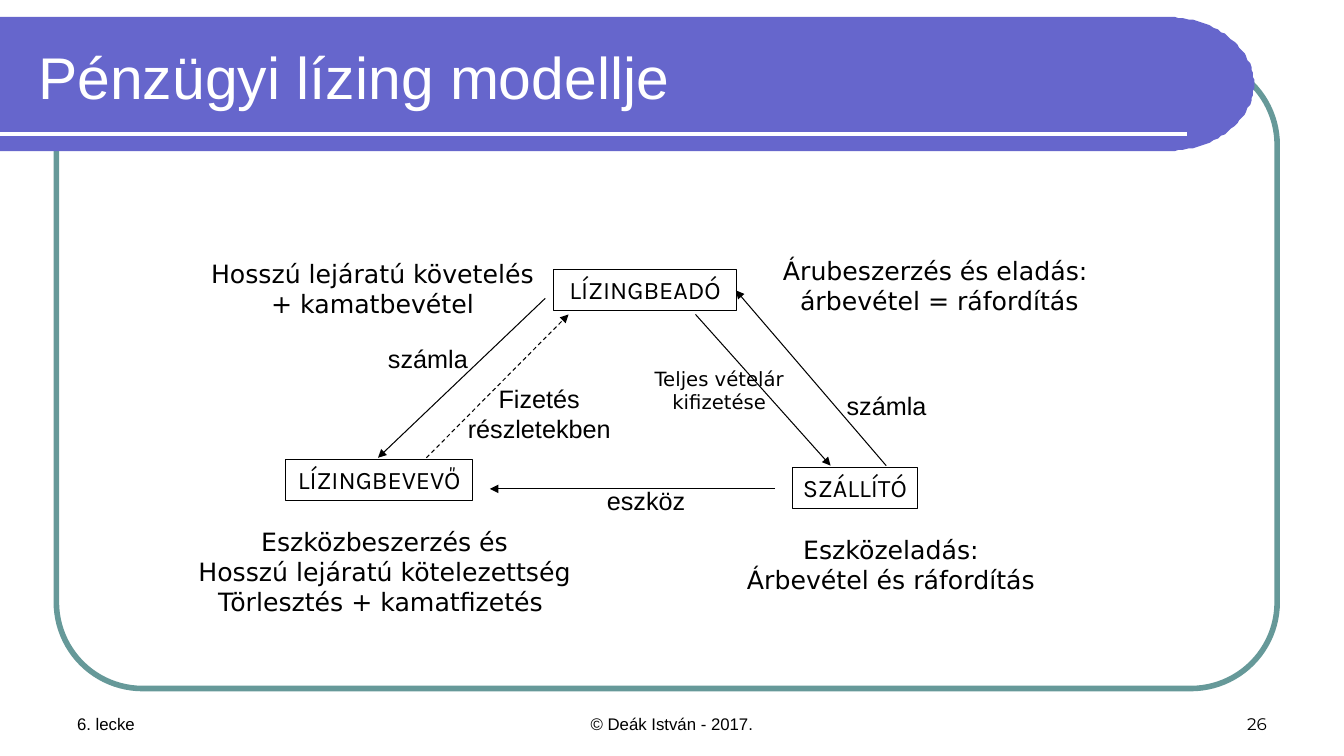
import math
from lxml import etree
from pptx import Presentation
from pptx import util as u
from pptx.dml.color import RGBColor
from pptx.enum import dml, shapes, text
from pptx.oxml.ns import qn

BLACK = RGBColor(0x00, 0x00, 0x00)
WHITE = RGBColor(0xFF, 0xFF, 0xFF)
PURPLE = RGBColor(0x66, 0x66, 0xCC)
TEAL = RGBColor(0x66, 0x99, 0x99)
LEFT, CENTER, RIGHT = (text.PP_ALIGN.LEFT, text.PP_ALIGN.CENTER,
                       text.PP_ALIGN.RIGHT)

# Diagram content, in points from the diagram's top left corner
PARTIES = [  # name, left, top, width
    ("LÍZINGBEADÓ", 261.3, 14.2, 131),
    ("SZÁLLÍTÓ", 432, 156, 89.3),
    ("LÍZINGBEVEVŐ", 69.8, 150.3, 134),
]
FLOWS = [  # start, end, dashed
    ((499, 154.6), (391.6, 29.4), False),
    ((362.8, 46.6), (459.3, 154.6), False),
    ((255.5, 35.1), (136, 149), False),
    ((170.6, 149), (272.1, 46.6), True),
    ((419.7, 171.2), (216, 171.2), False),
]
LABELS = [  # wording, left, top, width, height, font, size
    ("Eszközeladás:\nÁrbevétel és ráfordítás",
     392.3, 200, 220.3, 50.4, "DejaVu Sans", 18),
    ("Árubeszerzés és eladás:\n árbevétel = ráfordítás",
     417.5, 0.6, 233.3, 50.4, "DejaVu Sans", 18),
    ("Eszközbeszerzés és\nHosszú lejáratú kötelezettség\nTörlesztés + kamatfizetés ",
     0, 194.2, 281.5, 72, "DejaVu Sans", 18),
    ("Hosszú lejáratú követelés\n+ kamatbevétel",
     8.6, 2.7, 247, 50.4, "DejaVu Sans", 18),
    ("Teljes vételár\nkifizetése", 325.4, 80.5, 108.7, 41, "DejaVu Sans", 14),
    ("számla", 463.6, 97, 71.3, 28.8, "Arial", 18),
    ("számla", 136, 63.9, 71.3, 28.8, "Arial", 18),
    ("Fizetés\nrészletekben", 192.9, 92, 116.6, 50.4, "Arial", 18),
    ("eszköz", 292.2, 165.4, 70.6, 28.8, "Arial", 18),
]


def points(*lengths):
    return [u.Pt(length) for length in lengths]


def write(shape, wording, font, size, color=BLACK, align=CENTER,
          anchor=text.MSO_ANCHOR.TOP, wrap=False):
    frame = shape.text_frame
    frame.text = wording
    frame.word_wrap = wrap
    frame.vertical_anchor = anchor
    for para in frame.paragraphs:
        para.alignment = align
        para.font.name = font
        para.font.size = u.Pt(size)
        para.font.color.rgb = color


def add_line(page, start, end, color, width):
    line = page.shapes.add_connector(shapes.MSO_CONNECTOR.STRAIGHT,
                                     *points(*start, *end))
    line.line.color.rgb = color
    line.line.width = u.Pt(width)
    etree.SubElement(line._element.spPr, qn("a:effectLst"))
    return line


def add_frame(page, box):
    frame = page.shapes.add_shape(shapes.MSO_SHAPE.ROUNDED_RECTANGLE,
                                  *points(*box))
    frame.adjustments[0] = 0.137
    frame.shadow.inherit = False
    frame.fill.background()
    frame.line.color.rgb = TEAL
    frame.line.width = u.Pt(4)


def add_header(page, box, title):
    left, top, width, height = box
    # Band with a half-ellipse at its right end
    radius_x, radius_y = 63.4, height / 2
    center_x, center_y = left + width - radius_x, top + radius_y
    steps = 60
    angles = [math.pi * (step / steps - 0.5) for step in range(steps + 1)]
    arc = [(center_x + radius_x * math.cos(angle),
            center_y + radius_y * math.sin(angle)) for angle in angles]
    builder = page.shapes.build_freeform(left, top, scale=u.Pt(1))
    builder.add_line_segments(arc + [(left, top + height)], close=True)
    band = builder.convert_to_shape()
    band.shadow.inherit = False
    band.fill.solid()
    band.fill.fore_color.rgb = PURPLE
    band.line.fill.background()

    # Rule under the title
    rule_y = top + 83.8
    add_line(page, (left, rule_y), (left + 848.2, rule_y), WHITE, 3)

    # Title, moved in front of the band
    heading = page.shapes.title
    heading.left, heading.top, heading.width, heading.height = points(
        left + 20.2, top + 6, 841.7, 72)
    write(heading, title, "Arial", 42, WHITE, LEFT,
          text.MSO_ANCHOR.MIDDLE, True)
    page.shapes._spTree.append(heading._element)


def add_diagram(page, box):
    left, top = box[:2]
    # Parties
    for name, x, y, width in PARTIES:
        party = page.shapes.add_shape(shapes.MSO_SHAPE.RECTANGLE,
                                      *points(left + x, top + y, width, 29.5))
        party.shadow.inherit = False
        party.fill.background()
        party.line.color.rgb = BLACK
        party.line.width = u.Pt(0.75)
        write(party, name, "Karla", 18)

    # Arrows between the parties
    for start, end, dashed in FLOWS:
        arrow = add_line(page, (left + start[0], top + start[1]),
                         (left + end[0], top + end[1]), BLACK, 0.75)
        if dashed:
            arrow.line.dash_style = dml.MSO_LINE.DASH
        etree.SubElement(arrow.line._get_or_add_ln(), qn("a:tailEnd"),
                         type="triangle")

    # Labels
    for wording, x, y, width, height, font, size in LABELS:
        label = page.shapes.add_textbox(
            *points(left + x, top + y, width, height))
        write(label, wording, font, size)


def add_footer(page, box):
    left, top, width, height = box
    side, middle = 224, 304
    for wording, x, part, font, align in [
            ("6. lecke", left, side, "Arial", LEFT),
            ("© Deák István - 2017.", left + (width - middle) / 2, middle,
             "Arial", CENTER),
            ("26", left + width - side, side, "Montserrat", RIGHT)]:
        note = page.shapes.add_textbox(*points(x, top, part, height))
        write(note, wording, font, 12, align=align,
              anchor=text.MSO_ANCHOR.BOTTOM, wrap=True)


def main():
    deck = Presentation()
    deck.slide_width, deck.slide_height = points(960, 540)
    page = deck.slides.add_slide(deck.slide_layouts[5])
    add_frame(page, (40.3, 41.8, 872, 450))
    add_header(page, (0, 12, 895.7, 96), "Pénzügyi lízing modellje")
    add_diagram(page, (134, 178, 651, 266))
    add_footer(page, (48, 492, 864, 36))
    deck.save("out.pptx")


if __name__ == "__main__":
    main()
